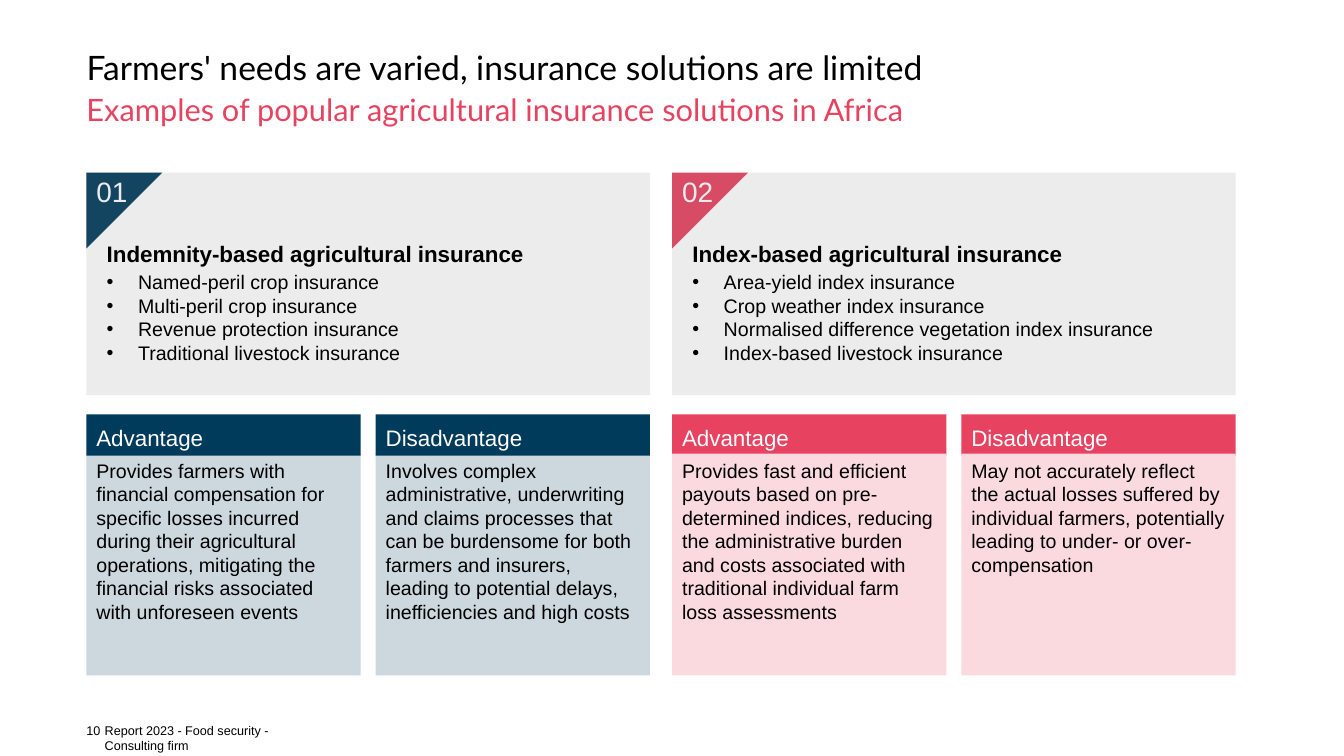
import pptx
import pptx.dml.color
import pptx.enum.shapes
import pptx.enum.text
import pptx.oxml
import pptx.oxml.ns
import pptx.util
from pptx.util import Cm

RGBColor = pptx.dml.color.RGBColor
SHAPE = pptx.enum.shapes.MSO_SHAPE
ANCHOR = pptx.enum.text.MSO_ANCHOR
NAVY = RGBColor(0x00, 0x3B, 0x5C)
PINK = RGBColor(0xE7, 0x43, 0x60)
PALE_PINK = RGBColor(0xFA, 0xD9, 0xDF)
GRAY = RGBColor(0x80, 0x80, 0x80)
BLACK = RGBColor(0x00, 0x00, 0x00)
WHITE = RGBColor(0xFF, 0xFF, 0xFF)
NAMESPACE = pptx.oxml.ns.nsdecls("a")


def write(box, text, size=14, color=BLACK, font="Arial", bold=False, bullet=False,
          spacing=None, after=None, anchor=ANCHOR.TOP, margins=None, wrap=True):
    frame = box.text_frame
    frame.word_wrap = wrap
    frame.vertical_anchor = anchor
    if margins:
        frame.margin_left, frame.margin_top, frame.margin_right, frame.margin_bottom = margins
    para = frame.add_paragraph() if frame.text else frame.paragraphs[0]
    para.alignment = pptx.enum.text.PP_ALIGN.LEFT
    para.line_spacing = spacing
    if after is not None:
        para.space_after = pptx.util.Pt(after)
    if bullet:
        properties = para._p.get_or_add_pPr()
        properties.set("marL", str(Cm(0.79)))
        properties.set("indent", str(-Cm(0.79)))
        properties.append(pptx.oxml.parse_xml(f'<a:buFont {NAMESPACE} typeface="Arial"/>'))
        properties.append(pptx.oxml.parse_xml(f'<a:buChar {NAMESPACE} char="•"/>'))
    span = para.add_run()
    span.text = text
    span.font.name = font
    span.font.size = pptx.util.Pt(size)
    span.font.bold = bold
    span.font.color.rgb = color


def add_block(kind, left, top, width, height, color, opacity=100):
    block = page.shapes.add_shape(kind, left, top, width, height)
    block.shadow.inherit = False
    block.line.fill.background()
    block.fill.solid()
    block.fill.fore_color.rgb = color
    if opacity < 100:
        tint = block._element.spPr.find(".//" + pptx.oxml.ns.qn("a:srgbClr"))
        tint.append(pptx.oxml.parse_xml(f'<a:alpha {NAMESPACE} val="{opacity * 1000}"/>'))
    return block


deck = pptx.Presentation()
deck.slide_width = Cm(33.87)
deck.slide_height = Cm(19.05)
page = deck.slides.add_slide(deck.slide_layouts[5])

LEFT = Cm(2.18)
NO_MARGINS = (0, 0, 0, 0)
title = page.shapes.title
title.left, title.top, title.width, title.height = LEFT, Cm(1.12), Cm(29.74), Cm(1.09)
write(title, "Farmers' needs are varied, insurance solutions are limited", size=24,
      font="Lato", spacing=0.9, anchor=ANCHOR.BOTTOM, margins=NO_MARGINS)

subtitle = page.shapes.add_textbox(LEFT, Cm(2.39), Cm(29.74), Cm(1.09))
write(subtitle, "Examples of popular agricultural insurance solutions in Africa", size=22,
      color=PINK, font="Lato", spacing=0.9, margins=NO_MARGINS)

for left, width, text in [
    (LEFT, Cm(0.43), "10"),
    (Cm(2.64), Cm(5.11), "Report 2023 - Food security - Consulting firm"),
]:
    footer = page.shapes.add_textbox(left, Cm(18.21), width, Cm(0.38))
    write(footer, text, size=9, margins=NO_MARGINS, wrap=False)

solutions = [
    ("01", "Indemnity-based agricultural insurance",
     ["Named-peril crop insurance", "Multi-peril crop insurance",
      "Revenue protection insurance", "Traditional livestock insurance"],
     NAVY, NAVY, 20,
     [("Advantage", "Provides farmers with financial compensation for specific losses "
       "incurred during their agricultural operations, mitigating the financial risks "
       "associated with unforeseen events"),
      ("Disadvantage", "Involves complex administrative, underwriting and claims processes "
       "that can be burdensome for both farmers and insurers, leading to potential delays, "
       "inefficiencies and high costs")]),
    ("02", "Index-based agricultural insurance",
     ["Area-yield index insurance", "Crop weather index insurance",
      "Normalised difference vegetation index insurance", "Index-based livestock insurance"],
     PINK, PALE_PINK, 100,
     [("Advantage", "Provides fast and efficient payouts based on pre-determined indices, "
       "reducing the administrative burden and costs associated with traditional individual "
       "farm loss assessments"),
      ("Disadvantage", "May not accurately reflect the actual losses suffered by individual "
       "farmers, potentially leading to under- or over-compensation")]),
]

for column, (number, heading, products, color, body_color, opacity, verdicts) in enumerate(solutions):
    left = LEFT + column * Cm(14.76)
    corner = add_block(SHAPE.DIAGONAL_STRIPE, left, Cm(4.35), Cm(1.91), Cm(1.91), color)
    corner.adjustments[0] = 0
    write(corner, number, size=20, color=WHITE, anchor=ANCHOR.MIDDLE, wrap=False)

    panel = add_block(SHAPE.RECTANGLE, left, Cm(4.35), Cm(14.2), Cm(5.61), GRAY, 15)
    write(panel, heading, size=16, bold=True, spacing=0.9, after=2,
          margins=(Cm(0.51), Cm(1.78), Cm(0.51), Cm(0.51)))
    for product in products:
        write(panel, product, bullet=True)

    for position, (label, reason) in enumerate(verdicts):
        card_left = left + position * Cm(7.29)
        header = add_block(SHAPE.RECTANGLE, card_left, Cm(10.44), Cm(6.91), Cm(1.04), color)
        write(header, label, size=16, color=WHITE, anchor=ANCHOR.BOTTOM)
        body = add_block(SHAPE.RECTANGLE, card_left, Cm(11.43), Cm(6.91), Cm(5.59),
                         body_color, opacity)
        write(body, reason)

deck.save("out.pptx")
